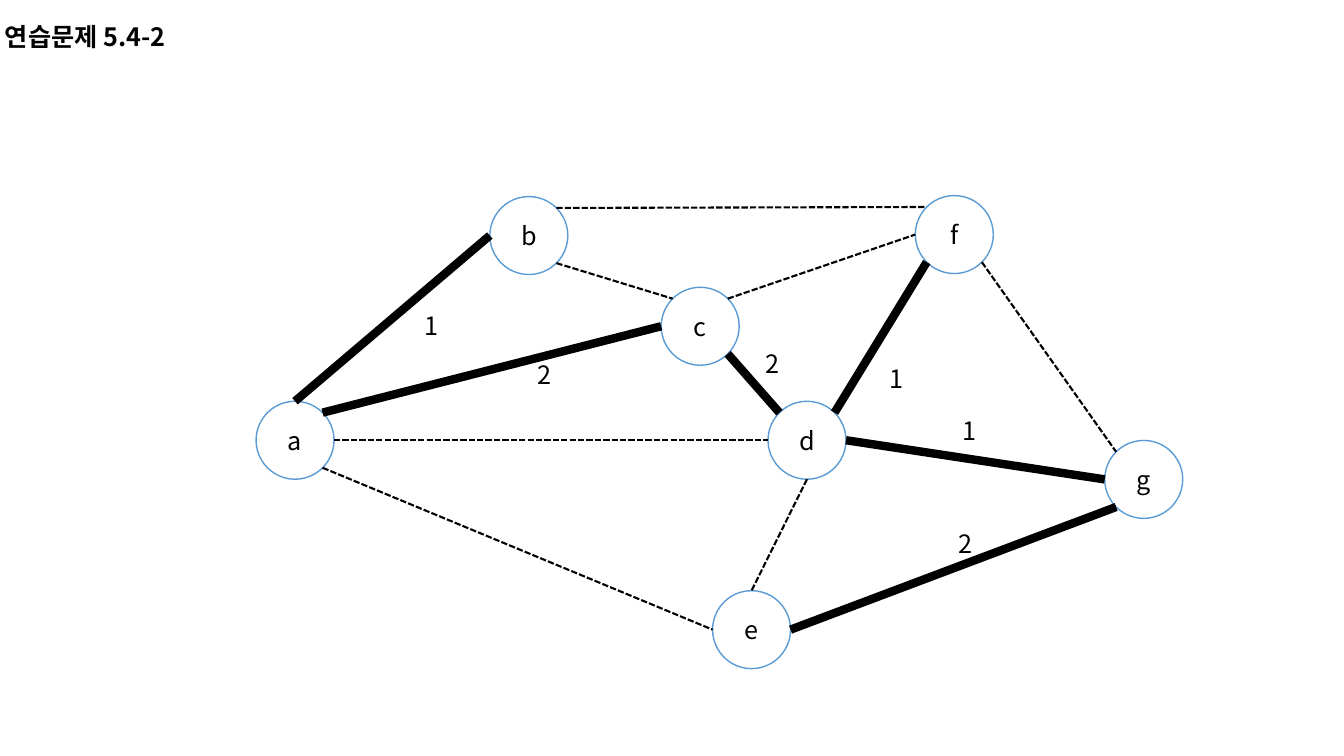
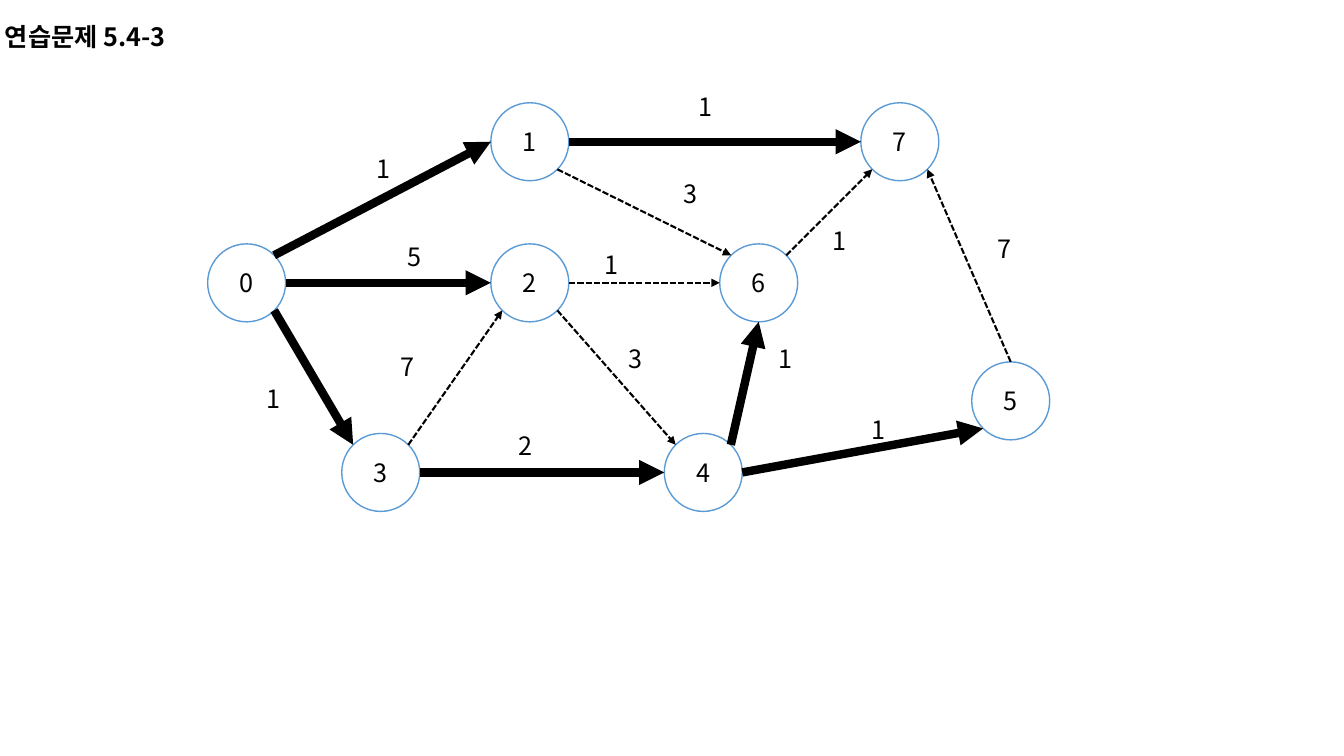
import math
from dataclasses import dataclass

import pptx
import pptx.dml.color
import pptx.enum.dml
import pptx.enum.shapes
import pptx.enum.text
import pptx.oxml.ns
import pptx.oxml.xmlchemy
import pptx.util
from lxml import etree

Pt = pptx.util.Pt
RGB = pptx.dml.color.RGBColor
qn = pptx.oxml.ns.qn


@dataclass(frozen=True)
class Theme:
    font: str = "Noto Sans CJK KR"
    ink: str = "000000"
    paper: str = "FFFFFF"
    outline: str = "5B9BD5"
    text_size: float = 18
    outline_width: float = 1
    chosen_width: float = 6
    other_width: float = 1.5


THEME = Theme()
SLIDE_SIZE = (960, 540)
TITLE_BOX = (-7.9, 10.1, 137.5, 29.1)
WEIGHT_SIZE = (37.4, 29.1)
DIAMETER = 55.7
SITES = ["N", "NW", "W", "SW", "S", "SE", "E", "NE"]
CHOSEN, OTHER = True, False

# Nodes: left, top. Edges: start, site, end, site, chosen, weight, weight left and top.
GRAPHS = [
    {
        "title": "연습문제 5.4-2",
        "directed": False,
        "nodes": {
            "a": (182.9, 286.6), "b": (349.9, 140.4), "c": (472.3, 205.2),
            "d": (548.6, 286.6), "e": (509, 421.9), "f": (653.8, 139.7),
            "g": (789.1, 314.6),
        },
        "edges": [
            ("a", "N", "b", "W", CHOSEN, "1", (289.4, 218.2)),
            ("a", "NE", "c", "W", CHOSEN, "2", (370.1, 253.4)),
            ("a", "E", "d", "W", OTHER, None, None),
            ("a", "SE", "e", "W", OTHER, None, None),
            ("b", "NE", "f", "NW", OTHER, None, None),
            ("b", "SE", "c", "NW", OTHER, None, None),
            ("c", "NE", "f", "W", OTHER, None, None),
            ("c", "SE", "d", "NW", CHOSEN, "2", (532.8, 245.5)),
            ("d", "NE", "f", "SW", CHOSEN, "1", (621.4, 255.6)),
            ("d", "E", "g", "W", CHOSEN, "1", (673.9, 293)),
            ("d", "S", "e", "N", OTHER, None, None),
            ("e", "E", "g", "SW", CHOSEN, "2", (671, 373.7)),
            ("f", "SE", "g", "NW", OTHER, None, None),
        ],
    },
    {
        "title": "연습문제 5.4-3",
        "directed": True,
        "nodes": {
            "0": (148.3, 174.2), "1": (350.6, 73.4), "2": (350.6, 174.2),
            "3": (244.1, 309.6), "4": (474.5, 309.6), "5": (694.1, 258.5),
            "6": (514.1, 174.2), "7": (614.9, 73.4),
        },
        "edges": [
            ("0", "NE", "1", "W", CHOSEN, "1", (254.9, 105.8)),
            ("0", "E", "2", "W", CHOSEN, "5", (277.2, 168.5)),
            ("0", "SE", "3", "NW", CHOSEN, "1", (176.4, 270)),
            ("1", "E", "7", "W", CHOSEN, "1", (485.3, 61.9)),
            ("1", "SE", "6", "NW", OTHER, "3", (474.5, 123.8)),
            ("2", "E", "6", "W", OTHER, "1", (418.3, 174.2)),
            ("2", "SE", "4", "NW", OTHER, "3", (434.9, 241.9)),
            ("3", "NE", "2", "SW", OTHER, "7", (272.2, 247.7)),
            ("3", "E", "4", "W", CHOSEN, "2", (356.4, 303.8)),
            ("4", "NE", "6", "S", CHOSEN, "1", (542.2, 241.9)),
            ("4", "E", "5", "SW", CHOSEN, "1", (609.1, 292.3)),
            ("5", "N", "7", "SE", OTHER, "7", (699.1, 163.4)),
            ("6", "NE", "7", "SW", OTHER, "1", (581, 157.7)),
        ],
    },
]


def write(frame, text, *, bold=False, wrap=True, middle=False, grow=False,
          line_spacing=None, space_after=None):
    frame.word_wrap = wrap
    anchors = pptx.enum.text.MSO_ANCHOR
    frame.vertical_anchor = anchors.MIDDLE if middle else anchors.TOP
    if grow:
        frame.auto_size = pptx.enum.text.MSO_AUTO_SIZE.SHAPE_TO_FIT_TEXT
    paragraph = frame.paragraphs[0]
    paragraph.alignment = pptx.enum.text.PP_ALIGN.CENTER
    if line_spacing:
        paragraph.line_spacing = line_spacing
    if space_after:
        paragraph.space_after = Pt(space_after)
    run = paragraph.add_run()
    run.text = text
    run.font.size = Pt(THEME.text_size)
    run.font.bold = bold
    run.font.color.rgb = RGB.from_string(THEME.ink)
    run.font.name = THEME.font
    etree.SubElement(run.font._element, qn("a:ea"), typeface=THEME.font)


def add_label(slide, text, box, **style):
    label = slide.shapes.add_textbox(*map(Pt, box))
    write(label.text_frame, text, grow=True, **style)


def add_node(slide, name, corner):
    node = slide.shapes.add_shape(
        pptx.enum.shapes.MSO_SHAPE.OVAL, *map(Pt, (*corner, DIAMETER, DIAMETER)))
    node.shadow.inherit = False
    node.fill.solid()
    node.fill.fore_color.rgb = RGB.from_string(THEME.paper)
    node.line.color.rgb = RGB.from_string(THEME.outline)
    node.line.width = Pt(THEME.outline_width)
    write(node.text_frame, name, middle=True)
    return node


def site_point(corner, site):
    angle = math.radians(45 * SITES.index(site))
    radius = DIAMETER / 2
    return (Pt(corner[0] + radius - radius * math.sin(angle)),
            Pt(corner[1] + radius - radius * math.cos(angle)))


def add_edge(slide, start, end, start_point, end_point, sites, chosen, directed):
    edge = slide.shapes.add_connector(
        pptx.enum.shapes.MSO_CONNECTOR.STRAIGHT, *start_point, *end_point)
    edge.begin_connect(start, 0)
    edge.end_connect(end, 0)
    edge.begin_x, edge.begin_y = start_point
    edge.end_x, edge.end_y = end_point
    for tag, site in zip(("a:stCxn", "a:endCxn"), sites):
        edge._element.xpath(f".//{tag}")[0].set("idx", str(SITES.index(site)))
    edge.line.color.rgb = RGB.from_string(THEME.ink)
    edge.line.width = Pt(THEME.chosen_width if chosen else THEME.other_width)
    if not chosen:
        edge.line.dash_style = pptx.enum.dml.MSO_LINE.SQUARE_DOT
    if directed:
        outline = edge._element.xpath("./p:spPr/a:ln")[0]
        etree.SubElement(outline, qn("a:tailEnd"), type="triangle")
    etree.SubElement(edge._element.spPr, qn("a:effectLst"))


def add_graph(slide, graph):
    add_label(slide, graph["title"], TITLE_BOX, bold=True, wrap=False,
              line_spacing=1.07, space_after=8)
    corners = graph["nodes"]
    nodes = {name: add_node(slide, name, corner) for name, corner in corners.items()}
    for start, start_site, end, end_site, chosen, weight, weight_at in graph["edges"]:
        add_edge(slide, nodes[start], nodes[end],
                 site_point(corners[start], start_site),
                 site_point(corners[end], end_site),
                 (start_site, end_site), chosen, graph["directed"])
        if weight:
            add_label(slide, weight, (*weight_at, *WEIGHT_SIZE))


def main():
    deck = pptx.Presentation()
    deck.slide_width, deck.slide_height = map(Pt, SLIDE_SIZE)
    for graph in GRAPHS:
        add_graph(deck.slides.add_slide(deck.slide_layouts[6]), graph)
    deck.save("out.pptx")


if __name__ == "__main__":
    main()
